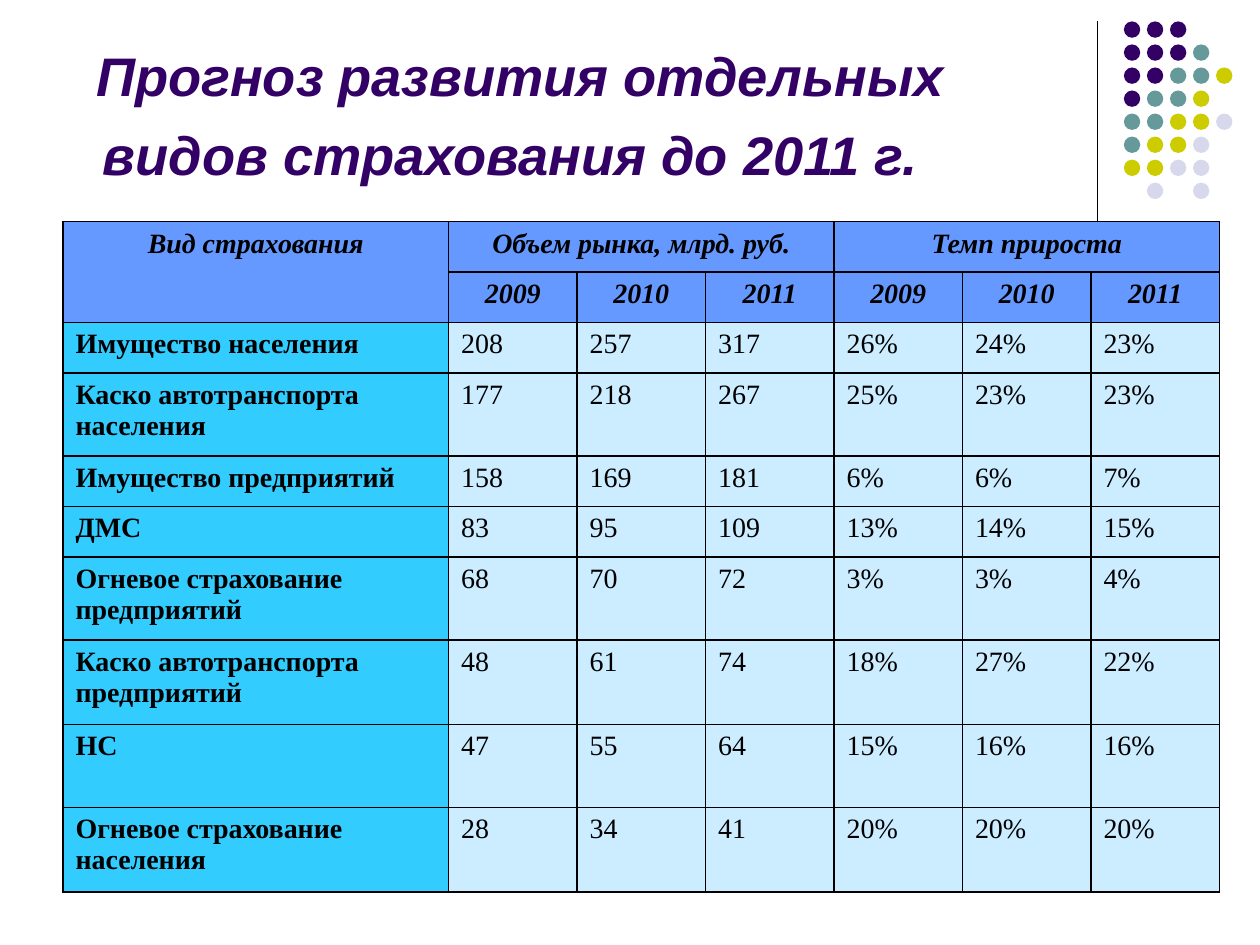
from lxml import etree
from pptx import Presentation
from pptx.dml.color import RGBColor
from pptx.enum import shapes, text
from pptx.oxml.ns import qn
from pptx.util import Inches, Pt

COLORS = {
    "purple": "330066", "teal": "669999", "olive": "CCCC00", "lilac": "D8D8EC",
    "black": "000000", "header": "6699FF", "kind": "33CCFF", "value": "CCECFF",
}
TITLE = "Прогноз развития отдельных видов страхования до 2011 г."
GROUPS = ["Объем рынка, млрд. руб.", "Темп прироста"]
YEARS = ["2009", "2010", "2011"]
FORECAST = [
    ("Имущество населения", 0.4, [208, 257, 317], [26, 24, 23]),
    ("Каско автотранспорта населения", 0.66, [177, 218, 267], [25, 23, 23]),
    ("Имущество предприятий", 0.4, [158, 169, 181], [6, 6, 7]),
    ("ДМС", 0.4, [83, 95, 109], [13, 14, 15]),
    ("Огневое страхование предприятий", 0.66, [68, 70, 72], [3, 3, 4]),
    ("Каско автотранспорта предприятий", 0.67, [48, 61, 74], [18, 27, 22]),
    ("НС", 0.66, [47, 55, 64], [15, 16, 16]),
    ("Огневое страхование населения", 0.67, [28, 34, 41], [20, 20, 20]),
]
DOT_ROWS = ["PPP", "PPPT", "PPTTO", "PTTO", "TTOOL", "TOOL", "OOLL", " L L"]
DOT_COLORS = {"P": "purple", "T": "teal", "O": "olive", "L": "lilac"}
DOT_SIZE, DOT_LEFT, DOT_TOP, DOT_PITCH = 0.13, 8.92, 0.17, 1.28 / 7
HEADER_HEIGHT, KIND_WIDTH, YEAR_WIDTH = 0.4, 3.06, 1.02


def rgb(name):
    return RGBColor.from_string(COLORS[name])


def add_run(paragraph, words, face, size, color, bold=False, italic=False):
    run = paragraph.add_run()
    run.text = words
    run.font.name, run.font.size = face, Pt(size)
    run.font.bold, run.font.italic = bold, italic
    run.font.color.rgb = rgb(color)


def add_borders(cell):
    properties = cell._tc.get_or_add_tcPr()
    for side in ("lnL", "lnR", "lnT", "lnB"):
        border = etree.SubElement(properties, qn(f"a:{side}"), w=str(Pt(1)))
        fill = etree.SubElement(border, qn("a:solidFill"))
        etree.SubElement(fill, qn("a:srgbClr"), val=COLORS["black"])


def add_divider(slide):
    divider = slide.shapes.add_connector(
        shapes.MSO_CONNECTOR.STRAIGHT, Inches(8.71), Inches(0.17), Inches(8.71), Inches(1.83))
    divider.line.color.rgb = rgb("black")
    divider.line.width = Pt(0.75)
    etree.SubElement(divider._element.spPr, qn("a:effectLst"))


def add_dots(slide):
    for row, marks in enumerate(DOT_ROWS):
        for column, mark in enumerate(marks):
            if mark == " ":
                continue
            dot = slide.shapes.add_shape(
                shapes.MSO_SHAPE.OVAL,
                Inches(DOT_LEFT + column * DOT_PITCH), Inches(DOT_TOP + row * DOT_PITCH),
                Inches(DOT_SIZE), Inches(DOT_SIZE))
            dot.shadow.inherit = False
            dot.fill.solid()
            dot.fill.fore_color.rgb = rgb(DOT_COLORS[mark])
            dot.line.fill.background()


def add_title(slide):
    heading = slide.shapes.add_textbox(Inches(0), Inches(0.13), Inches(8.25), Inches(1.42))
    frame = heading.text_frame
    frame.word_wrap = True
    frame.vertical_anchor = text.MSO_ANCHOR.BOTTOM
    line = frame.paragraphs[0]
    line.alignment = text.PP_ALIGN.CENTER
    add_run(line, TITLE, "Arial", 31, "purple", bold=True, italic=True)
    add_run(line, " ", "Arial", 39, "purple", bold=True)


def add_forecast(slide):
    group_cells = [label for group in GROUPS for label in (group, "", "")]
    rows = [["Вид страхования"] + group_cells, [""] + YEARS * len(GROUPS)]
    rows += [[kind] + [str(v) for v in volumes] + [f"{g}%" for g in growth]
             for kind, _, volumes, growth in FORECAST]
    heights = [HEADER_HEIGHT] * 2 + [height for _, height, _, _ in FORECAST]
    widths = [KIND_WIDTH] + [YEAR_WIDTH] * len(YEARS) * len(GROUPS)

    forecast = slide.shapes.add_table(
        len(rows), len(widths), Inches(0.5), Inches(1.76),
        Inches(sum(widths)), Inches(sum(heights))).table
    for column, width in zip(forecast.columns, widths):
        column.width = Inches(width)
    for row, height in zip(forecast.rows, heights):
        row.height = Inches(height)

    for r, labels in enumerate(rows):
        for c, label in enumerate(labels):
            cell = forecast.cell(r, c)
            is_header, is_kind = r < 2, c == 0
            add_borders(cell)
            cell.fill.solid()
            cell.fill.fore_color.rgb = rgb(
                "header" if is_header else "kind" if is_kind else "value")
            line = cell.text_frame.paragraphs[0]
            line.alignment = text.PP_ALIGN.CENTER if is_header else text.PP_ALIGN.LEFT
            if label:
                add_run(line, label, "Times New Roman", 16, "black",
                        bold=is_header or is_kind, italic=is_header)

    forecast.cell(0, 0).merge(forecast.cell(1, 0))
    for first in range(1, len(widths), len(YEARS)):
        forecast.cell(0, first).merge(forecast.cell(0, first + len(YEARS) - 1))


def main():
    deck = Presentation()
    deck.slide_width, deck.slide_height = Inches(10), Inches(7.5)
    slide = deck.slides.add_slide(deck.slide_layouts[6])
    add_divider(slide)
    add_dots(slide)
    add_title(slide)
    add_forecast(slide)
    deck.save("out.pptx")


if __name__ == "__main__":
    main()
